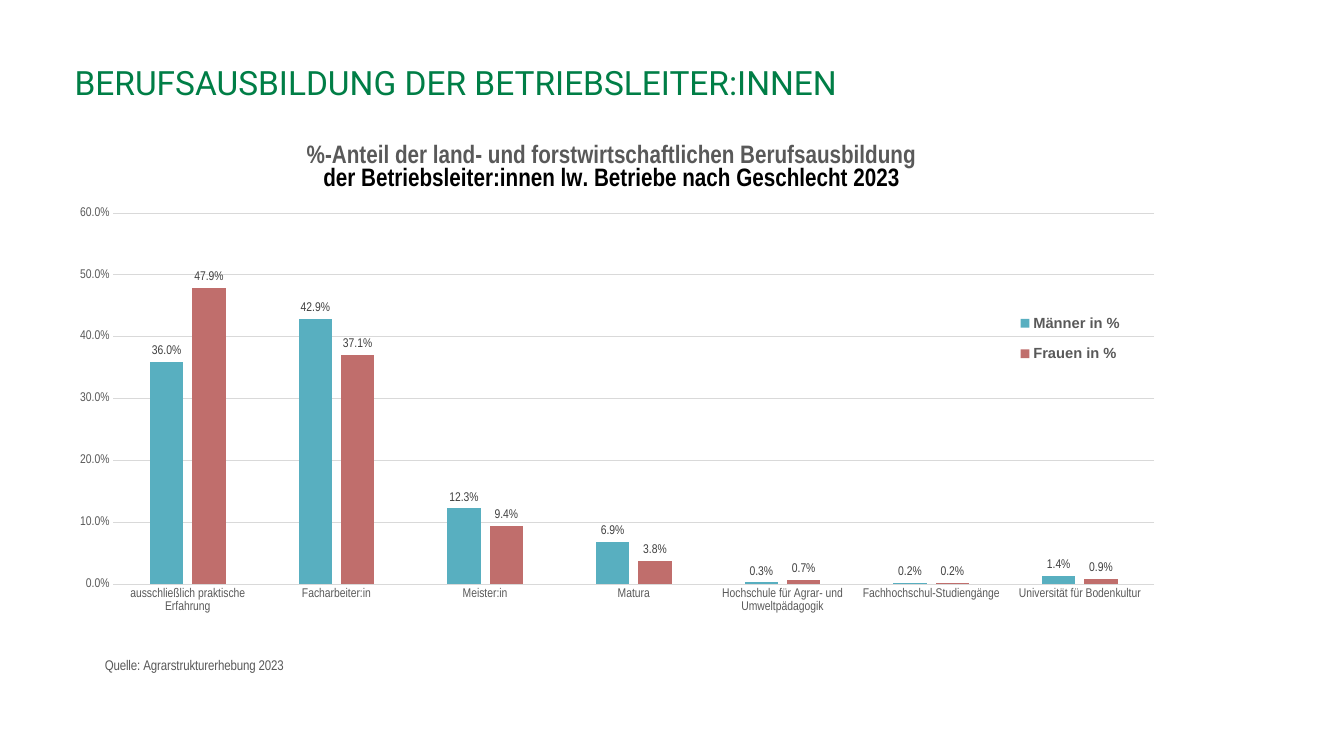
from dataclasses import dataclass

from lxml import etree
from pptx import Presentation
from pptx import util as u
from pptx.chart.chart import Chart
from pptx.chart.data import CategoryChartData
from pptx.dml.color import RGBColor
from pptx.enum import chart as ch
from pptx.enum import text
from pptx.oxml.ns import qn
from pptx.slide import Slide

COLORS = {
    "heading": "007E46",
    "text": "595959",
    "label": "404040",
    "black": "000000",
    "grid": "D9D9D9",
    "men": "58AFC0",
    "women": "C06E6C",
}
NARROW = "Arial Narrow"
PERCENT = "0.0%"
CATEGORIES = [
    "ausschließlich praktische Erfahrung",
    "Facharbeiter:in",
    "Meister:in",
    "Matura",
    "Hochschule für Agrar- und Umweltpädagogik",
    "Fachhochschul-Studiengänge",
    "Universität für Bodenkultur",
]


@dataclass
class ShareSeries:
    name: str
    color: str
    values: list[float]


@dataclass
class TitleLine:
    content: str
    color: str


SERIES = [
    ShareSeries("Männer in %", "men", [0.36, 0.429, 0.123, 0.069, 0.003, 0.002, 0.014]),
    ShareSeries("Frauen in %", "women", [0.479, 0.371, 0.094, 0.038, 0.007, 0.002, 0.009]),
]
CHART_TITLE = [
    TitleLine("%-Anteil der land- und forstwirtschaftlichen Berufsausbildung", "text"),
    TitleLine("der Betriebsleiter:innen lw. Betriebe nach Geschlecht 2023", "black"),
]
SOURCE_NOTE = [TitleLine("Quelle: Agrarstrukturerhebung 2023", "text")]


def rgb(name: str) -> RGBColor:
    return RGBColor.from_string(COLORS[name])


def style_font(font, name: str, size: float, color: str, bold: bool = False) -> None:
    font.name, font.size, font.bold = name, u.Pt(size), bold
    font.color.rgb = rgb(color)


def write_lines(frame, lines: list[TitleLine], size: float, bold: bool) -> None:
    for index, line in enumerate(lines):
        paragraph = frame.add_paragraph() if index else frame.paragraphs[0]
        paragraph.text = line.content
        style_font(paragraph.font, NARROW, size, line.color, bold)


def place(element, index: int, x: float, y: float,
          size: tuple[float, float] | None = None, inner: bool = False) -> None:
    """Give a chart part a manual layout, in fractions of the chart frame."""
    for old in element.findall(qn("c:layout")):
        element.remove(old)
    layout = etree.Element(qn("c:layout"))
    manual = etree.SubElement(layout, qn("c:manualLayout"))
    settings = [("layoutTarget", "inner")] if inner else []
    settings += [("xMode", "edge"), ("yMode", "edge"), ("x", x), ("y", y)]
    if size:
        settings += [("w", size[0]), ("h", size[1])]
    for tag, value in settings:
        etree.SubElement(manual, qn(f"c:{tag}")).set("val", str(value))
    element.insert(index, layout)


def add_heading(slide: Slide) -> None:
    title = slide.shapes.title
    title.left, title.top = u.Inches(0.64), u.Inches(0.59)
    title.width, title.height = u.Inches(9.99), u.Inches(0.49)
    frame = title.text_frame
    frame.text = "BERUFSAUSBILDUNG DER BETRIEBSLEITER:INNEN"
    frame.auto_size = text.MSO_AUTO_SIZE.NONE
    frame.vertical_anchor = text.MSO_ANCHOR.MIDDLE
    paragraph = frame.paragraphs[0]
    paragraph.alignment = text.PP_ALIGN.LEFT
    paragraph.line_spacing = 0.9
    style_font(paragraph.font, "Roboto", 23.9, "heading")


def format_axes(chart: Chart) -> None:
    for axis in (chart.category_axis, chart.value_axis):
        axis.major_tick_mark = axis.minor_tick_mark = ch.XL_TICK_MARK.NONE
        style_font(axis.tick_labels.font, NARROW, 9, "text")
    category_line = chart.category_axis.format.line
    grid_line = chart.value_axis.major_gridlines.format.line
    for line in (category_line, grid_line):
        line.color.rgb = rgb("grid")
        line.width = u.Pt(0.75)
    value_axis = chart.value_axis
    value_axis.format.line.fill.background()
    value_axis.minimum_scale, value_axis.maximum_scale = 0, 0.6
    value_axis.major_unit = 0.1
    value_axis.tick_labels.number_format = PERCENT
    value_axis.tick_labels.number_format_is_linked = False


def format_series(chart: Chart) -> None:
    plot = chart.plots[0]
    plot.gap_width, plot.overlap = 219, -27
    plot.vary_by_categories = False
    for series, share in zip(plot.series, SERIES):
        series.format.fill.solid()
        series.format.fill.fore_color.rgb = rgb(share.color)
        labels = series.data_labels
        labels.show_value = True
        labels.position = ch.XL_LABEL_POSITION.OUTSIDE_END
        labels.number_format = PERCENT
        labels.number_format_is_linked = False
        style_font(labels.font, NARROW, 9, "label")


def add_education_chart(slide: Slide) -> None:
    data = CategoryChartData(number_format=PERCENT)
    data.categories = CATEGORIES
    for share in SERIES:
        data.add_series(share.name, share.values)
    chart = slide.shapes.add_chart(
        ch.XL_CHART_TYPE.COLUMN_CLUSTERED,
        u.Inches(0.57), u.Inches(1.22), u.Inches(11.1), u.Inches(5.7), data,
    ).chart
    style_font(chart.font, "Arial", 10, "black")
    format_axes(chart)
    format_series(chart)

    write_lines(chart.chart_title.text_frame, CHART_TITLE, 18, True)
    source_title = chart.category_axis.axis_title
    write_lines(source_title.text_frame, SOURCE_NOTE, 10, False)
    chart.has_legend = True
    chart.legend.position = ch.XL_LEGEND_POSITION.BOTTOM
    chart.legend.include_in_layout = False
    style_font(chart.legend.font, "Arial", 10.5, "text", True)

    place(chart.chart_title.element, 1, 0.22, 0.03)
    place(source_title.element, 1, 0.04, 0.93)
    place(chart.element.xpath(".//c:legend")[0], 1, 0.85, 0.31, (0.11, 0.13))
    place(chart.element.xpath(".//c:plotArea")[0], 0, 0.05, 0.157, (0.93, 0.646), True)


def main() -> None:
    presentation = Presentation()
    presentation.slide_width = u.Inches(13.33)
    presentation.slide_height = u.Inches(7.5)
    slide = presentation.slides.add_slide(presentation.slide_layouts[5])
    add_education_chart(slide)
    add_heading(slide)
    presentation.save("out.pptx")


if __name__ == "__main__":
    main()
